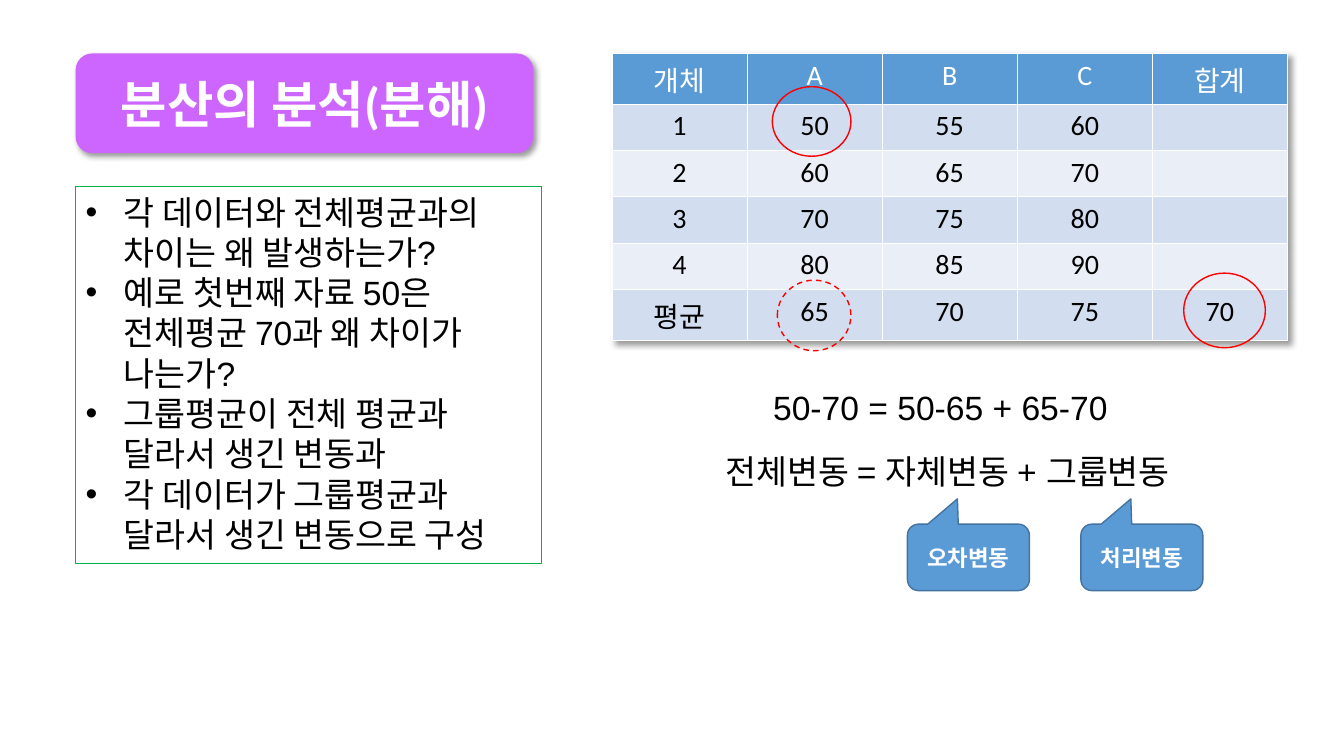
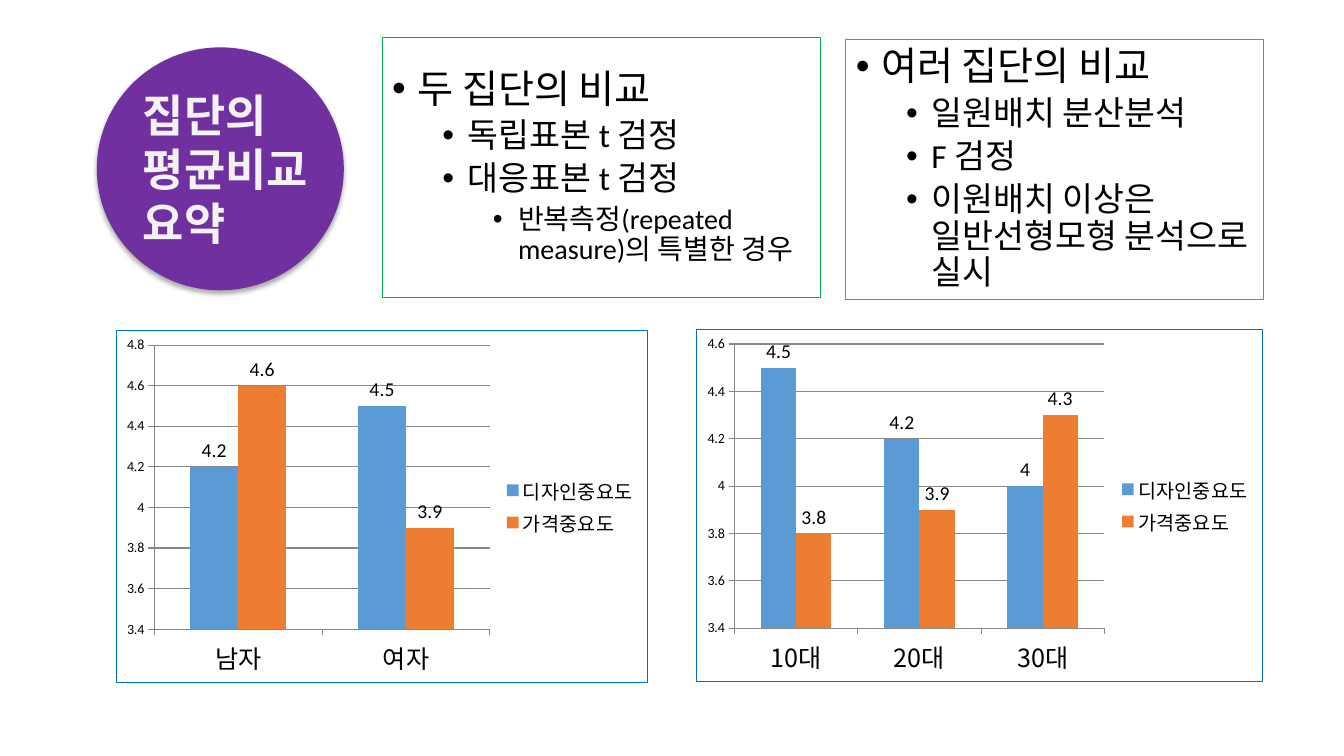
from dataclasses import dataclass

from lxml.etree import SubElement
from pptx import Presentation
from pptx.chart.data import CategoryChartData
from pptx.dml.color import RGBColor
from pptx.enum.chart import XL_CHART_TYPE, XL_LABEL_POSITION, XL_LEGEND_POSITION
from pptx.enum.dml import MSO_LINE
from pptx.enum.shapes import MSO_SHAPE
from pptx.enum.text import MSO_ANCHOR, PP_ALIGN
from pptx.oxml import parse_xml
from pptx.oxml.ns import nsdecls, qn
from pptx.util import Inches, Pt


@dataclass(frozen=True)
class Theme:
    # Fonts
    latin: str = "Calibri"
    sans: str = "Arial"
    korean: str = "Noto Sans CJK KR"
    # Colours
    black: str = "000000"
    white: str = "FFFFFF"
    off_white: str = "F2F2F2"
    blue: str = "5B9BD5"
    orange: str = "ED7D31"
    callout_edge: str = "43739E"
    chart_edge: str = "0070C0"
    grid: str = "878787"
    band_dark: str = "D2DEEF"
    band_light: str = "EAEFF7"
    green: str = "00B050"
    cyan: str = "00B0F0"
    red: str = "FF0000"
    pink: str = "CC66FF"
    purple: str = "7030A0"
    # Type sizes
    title: int = 36
    badge: int = 32
    levels: tuple = (28, 24, 20)
    body: int = 24
    cell: int = 20
    callout: int = 16
    chart: int = 18
    label: int = 14
    tick: int = 10


THEME = Theme()


def rgb(value):
    return RGBColor.from_string(value)


def effects(shadow=None):
    """Effect list; shadow is (opacity %, blur pt, distance pt, degrees)."""
    inner = ""
    if shadow:
        opacity, blur, distance, angle = shadow
        inner = (f'<a:outerShdw blurRad="{Pt(blur)}" dist="{Pt(distance)}" '
                 f'dir="{angle * 60000}" algn="tl" rotWithShape="0">'
                 f'<a:srgbClr val="{THEME.black}"><a:alpha val="{opacity * 1000}"/>'
                 '</a:srgbClr></a:outerShdw>')
    return parse_xml(f'<a:effectLst {nsdecls("a")}>{inner}</a:effectLst>')


def add_east_asian(element):
    """Give every Latin font setting a Korean counterpart."""
    for latin in list(element.iter(qn("a:latin"))):
        latin.addnext(parse_xml(
            f'<a:ea {nsdecls("a")} typeface="{THEME.korean}"/>'))


class Deck:
    def __init__(self):
        self.prs = Presentation()
        self.prs.slide_width = Inches(13.33)
        self.prs.slide_height = Inches(7.5)
        self.s = None

    def slide(self):
        self.s = self.prs.slides.add_slide(self.prs.slide_layouts[6])

    def save(self):
        for s in self.prs.slides:
            add_east_asian(s.shapes.element)
        self.prs.save("out.pptx")

    def run(self, p, text, size, color=THEME.black, font=THEME.latin, bold=False):
        r = p.add_run()
        r.text = text
        r.font.size = Pt(size)
        r.font.name = font
        r.font.bold = bold
        r.font.color.rgb = rgb(color)

    def bullet(self, p, left, hanging):
        pPr = p._p.get_or_add_pPr()
        pPr.set("marL", str(Inches(left)))
        pPr.set("indent", str(-Inches(hanging)))
        SubElement(pPr, qn("a:buFont")).set("typeface", THEME.sans)
        SubElement(pPr, qn("a:buChar")).set("char", "•")

    def shape(self, kind, box, fill=None, line=None, width=1.0, shadow=None):
        sp = self.s.shapes.add_shape(kind, *map(Inches, box))
        sp.shadow.inherit = False
        if fill:
            sp.fill.solid()
            sp.fill.fore_color.rgb = rgb(fill)
        else:
            sp.fill.background()
        if line:
            sp.line.color.rgb = rgb(line)
            sp.line.width = Pt(width)
        else:
            sp.line.fill.background()
        if shadow:
            old = sp._element.spPr.find(qn("a:effectLst"))
            old.getparent().replace(old, effects(shadow))
        sp.text_frame.vertical_anchor = MSO_ANCHOR.MIDDLE
        return sp

    def title(self, box, text):
        sp = self.shape(MSO_SHAPE.ROUNDED_RECTANGLE, box, THEME.pink,
                        shadow=(40, 4, 3, 45))
        p = sp.text_frame.paragraphs[0]
        p.alignment = PP_ALIGN.CENTER
        self.run(p, text, THEME.title, THEME.white, bold=True)

    def badge(self, box, lines):
        sp = self.shape(MSO_SHAPE.OVAL, box, THEME.purple, shadow=(32, 3.5, 2.2, 90))
        sp.text_frame.word_wrap = False
        p = sp.text_frame.paragraphs[0]
        p.alignment = PP_ALIGN.LEFT
        for i, line in enumerate(lines):
            if i:
                p.add_line_break()
            self.run(p, line, THEME.badge, THEME.off_white, THEME.korean, True)

    def text(self, box, text):
        tf = self.s.shapes.add_textbox(*map(Inches, box)).text_frame
        tf.word_wrap = True
        self.run(tf.paragraphs[0], text, THEME.body, font=THEME.sans)

    def framed(self, box, line, count):
        """Outlined box; returns its frame with the given number of paragraphs."""
        tf = self.shape(MSO_SHAPE.RECTANGLE, box, line=line, width=0.75).text_frame
        for _ in range(count - 1):
            tf.add_paragraph()
        for p in tf.paragraphs:
            p.alignment = PP_ALIGN.LEFT
        return tf

    def bullet_box(self, box, items):
        tf = self.framed(box, THEME.green, len(items))
        tf.vertical_anchor = MSO_ANCHOR.TOP
        for p, item in zip(tf.paragraphs, items):
            self.bullet(p, 0.38, 0.38)
            self.run(p, item, THEME.body, font=THEME.sans)

    def outline(self, box, line, items):
        tf = self.framed(box, line, len(items))
        for p, (level, item) in zip(tf.paragraphs, items):
            p.level = level
            p.line_spacing = 0.9
            p.space_before = Pt(5 if level else 10)
            self.bullet(p, 0.25 + 0.5 * level, 0.25)
            self.run(p, item, THEME.levels[level])

    def callout(self, box, text):
        sp = self.shape(MSO_SHAPE.ROUNDED_RECTANGULAR_CALLOUT, box, THEME.blue,
                        THEME.callout_edge)
        sp.adjustments[0], sp.adjustments[1] = -0.09, -0.88
        p = sp.text_frame.paragraphs[0]
        p.alignment = PP_ALIGN.CENTER
        self.run(p, text, THEME.callout, THEME.white, font=THEME.sans, bold=True)

    def ring(self, box, dashed=False):
        sp = self.shape(MSO_SHAPE.OVAL, box, line=THEME.red)
        if dashed:
            sp.line.dash_style = MSO_LINE.DASH

    def table(self, box, rows):
        frame = self.s.shapes.add_table(len(rows), len(rows[0]), *map(Inches, box))
        table = frame.table
        table._tbl.tblPr.insert(0, effects((40, 4, 3, 45)))
        for i, row in enumerate(rows):
            band = THEME.band_dark if i % 2 else THEME.band_light
            for j, value in enumerate(row):
                cell = table.cell(i, j)
                cell.fill.solid()
                cell.fill.fore_color.rgb = rgb(band if i else THEME.blue)
                if value:
                    p = cell.text_frame.paragraphs[0]
                    p.alignment = PP_ALIGN.CENTER
                    self.run(p, value, THEME.cell,
                             THEME.black if i else THEME.white)

    def columns(self, box, categories, series, top):
        data = CategoryChartData()
        data.categories = categories
        for name, values in series:
            data.add_series(name, values)
        chart = self.s.shapes.add_chart(
            XL_CHART_TYPE.COLUMN_CLUSTERED, *map(Inches, box), data).chart
        chart.has_title = False
        self.chart_font(chart.font, THEME.chart, THEME.latin)

        # Legend
        chart.has_legend = True
        chart.legend.position = XL_LEGEND_POSITION.RIGHT
        chart.legend.include_in_layout = False
        self.chart_font(chart.legend.font, THEME.label, THEME.korean)

        # Axes
        cat, val = chart.category_axis, chart.value_axis
        self.chart_font(cat.tick_labels.font, THEME.chart, THEME.korean)
        self.chart_font(val.tick_labels.font, THEME.tick, THEME.latin)
        val.minimum_scale, val.maximum_scale, val.major_unit = 3.4, top, 0.2
        for part in (cat, val, val.major_gridlines):
            part.format.line.color.rgb = rgb(THEME.grid)
            part.format.line.width = Pt(0.75)

        # Bars and labels
        plot = chart.plots[0]
        plot.vary_by_categories = False
        plot.gap_width, plot.overlap = 150, 0
        for bars, color in zip(plot.series, (THEME.blue, THEME.orange)):
            bars.format.fill.solid()
            bars.format.fill.fore_color.rgb = rgb(color)
            labels = bars.data_labels
            labels.show_value = True
            labels.position = XL_LABEL_POSITION.OUTSIDE_END
            self.chart_font(labels.font, THEME.label, THEME.latin)

        # Border
        space = chart._chartSpace
        space.find(qn("c:chart")).addnext(parse_xml(
            f'<c:spPr {nsdecls("c", "a")}><a:noFill/><a:ln w="{Pt(0.75)}"><a:solidFill>'
            f'<a:srgbClr val="{THEME.chart_edge}"/></a:solidFill></a:ln></c:spPr>'))
        add_east_asian(space)

    def chart_font(self, font, size, name):
        font.size = Pt(size)
        font.name = name
        font.bold = False
        font.color.rgb = rgb(THEME.black)


def variance_slide(deck):
    deck.slide()
    deck.table((6.07, 0.53, 6.7, 2.76), [
        ("개체", "A", "B", "C", "합계"),
        ("1", "50", "55", "60", ""),
        ("2", "60", "65", "70", ""),
        ("3", "70", "75", "80", ""),
        ("4", "80", "85", "90", ""),
        ("평균", "65", "70", "75", "70"),
    ])
    deck.bullet_box((0.75, 1.85, 4.62, 3.74), [
        "각 데이터와 전체평균과의 차이는 왜 발생하는가?",
        "예로 첫번째 자료 50은 전체평균 70과 왜 차이가 나는가?",
        "그룹평균이 전체 평균과 달라서 생긴 변동과",
        "각 데이터가 그룹평균과 달라서 생긴 변동으로 구성",
    ])
    deck.text((7.57, 3.79, 4.04, 0.5), "50-70 = 50-65 + 65-70")
    deck.text((7.1, 4.42, 5.19, 0.5), "전체변동 = 자체변동 + 그룹변동")
    for left, name in ((9, "오차변동"), (10.72, "처리변동")):
        deck.callout((left, 5.2, 1.21, 0.66), name)
    deck.ring((7.66, 0.86, 0.78, 0.69))
    deck.ring((11.74, 2.71, 0.81, 0.74))
    deck.ring((7.71, 2.78, 0.73, 0.7), dashed=True)
    deck.title((0.75, 0.53, 4.54, 0.99), "분산의 분석(분해)")


def summary_slide(deck):
    deck.slide()
    deck.outline((3.79, 0.37, 4.35, 2.58), THEME.green, [
        (0, "두 집단의 비교"),
        (1, "독립표본 t 검정"),
        (1, "대응표본 t 검정"),
        (2, "반복측정(repeated measure)의 특별한 경우"),
    ])
    deck.badge((0.96, 0.47, 2.45, 2.41), ("집단의", "평균비교", "요약"))
    design, price = "디자인중요도", "가격중요도"
    deck.columns((6.9, 3.26, 5.63, 3.51), ("10대", "20대", "30대"),
                 ((design, (4.5, 4.2, 4)), (price, (3.8, 3.9, 4.3))), top=4.6)
    deck.columns((1.15, 3.27, 5.28, 3.51), ("남자", "여자"),
                 ((design, (4.2, 4.5)), (price, (4.6, 3.9))), top=4.8)
    deck.outline((8.39, 0.39, 4.14, 2.58), THEME.cyan, [
        (0, "여러 집단의 비교"),
        (1, "일원배치 분산분석"),
        (1, "F 검정"),
        (1, "이원배치 이상은 일반선형모형 분석으로 실시"),
    ])


def main():
    deck = Deck()
    variance_slide(deck)
    summary_slide(deck)
    deck.save()


if __name__ == "__main__":
    main()
